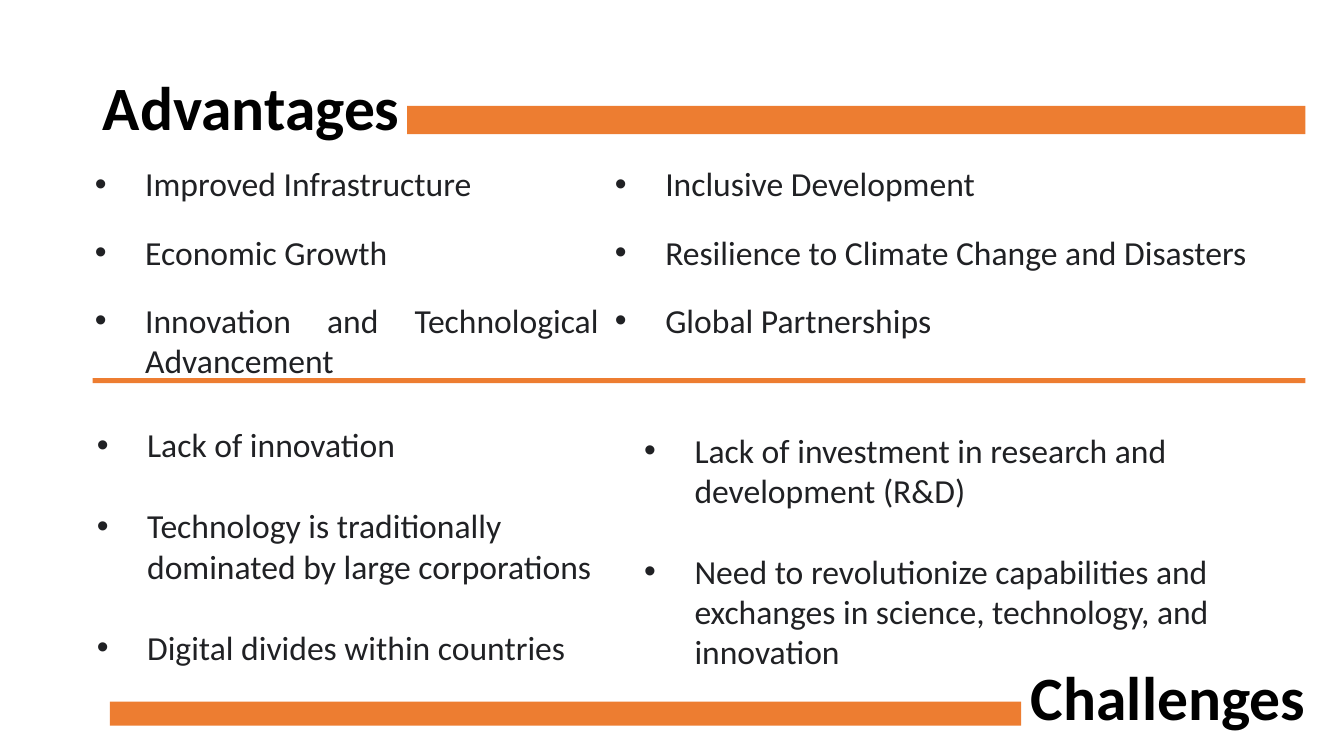
from lxml import etree
from pptx import Presentation
from pptx.dml.color import RGBColor
from pptx.enum.shapes import MSO_SHAPE
from pptx.enum.text import MSO_ANCHOR, MSO_AUTO_SIZE, PP_ALIGN
from pptx.oxml.ns import qn
from pptx.util import Pt

RECT = MSO_SHAPE.RECTANGLE
TOP, MIDDLE = MSO_ANCHOR.TOP, MSO_ANCHOR.MIDDLE
NO_FIT = MSO_AUTO_SIZE.NONE
LEFT, JUSTIFY = PP_ALIGN.LEFT, PP_ALIGN.JUSTIFY

PX = 9144  # 100 px to the inch
COLORS = {"accent": "ED7D31", "head": "000000", "text": "202124"}
HEAD = {"name": "Calibri", "size": Pt(44), "bold": True}
ITEM = {"name": "Calibri", "size": Pt(24), "bold": False}

# Placeholder number, box, alignment, gap in points, items
LISTS = [
    (1, (59, 157, 545, 182), JUSTIFY, 20,
     ["Improved Infrastructure", "Economic Growth",
      "Innovation and Technological Advancement"]),
    (2, (575, 157, 740, 182), JUSTIFY, 20,
     ["Inclusive Development", "Resilience to Climate Change and Disasters",
      "Global Partnerships"]),
    (3, (61, 416, 580, 269), LEFT, 29,
     ["Lack of innovation",
      "Technology is traditionally dominated by large corporations",
      "Digital divides within countries"]),
    (4, (604, 421, 691, 212), LEFT, 29,
     ["Lack of investment in research and development (R&D)",
      "Need to revolutionize capabilities and exchanges in science, "
      "technology, and innovation"]),
]

# Divider, then the bars beside the two headings
BARS = [(92, 375, 1203, 5), (404, 105, 891, 28), (109, 696, 904, 24)]


def place(shape, box):
    for side, px in zip(("left", "top", "width", "height"), box):
        setattr(shape, side, px * PX)


def style(font, look, color):
    for key, value in look.items():
        setattr(font, key, value)
    font.color.rgb = RGBColor.from_string(COLORS[color])


def set_frame(frame, anchor):
    frame.word_wrap = True
    frame.auto_size = NO_FIT
    frame.vertical_anchor = anchor


def add_bullet(para):
    props = para._p.get_or_add_pPr()
    props.set("marL", str(75 * PX))
    props.set("indent", str(-50 * PX))
    tint = etree.SubElement(props, qn("a:buClr"))
    etree.SubElement(tint, qn("a:srgbClr"), val=COLORS["text"])
    etree.SubElement(props, qn("a:buFont"), typeface="Arial")
    etree.SubElement(props, qn("a:buChar"), char="•")


def fill_head(shape, box, text):
    place(shape, box)
    frame = shape.text_frame
    set_frame(frame, MIDDLE)
    para = frame.paragraphs[0]
    para.alignment = LEFT
    para.line_spacing = 0.9
    run = para.add_run()
    run.text = text
    style(run.font, HEAD, "head")


def fill_list(shape, box, align, gap, items):
    place(shape, box)
    frame = shape.text_frame
    set_frame(frame, TOP)
    for i, item in enumerate(items):
        para = frame.add_paragraph() if i else frame.paragraphs[0]
        add_bullet(para)
        para.alignment = align
        para.space_before = Pt(gap if i else 0)
        run = para.add_run()
        run.text = item
        style(run.font, ITEM, "text")


def add_bar(slide, box):
    bar = slide.shapes.add_shape(RECT, *(px * PX for px in box))
    bar.shadow.inherit = False
    bar.fill.solid()
    bar.fill.fore_color.rgb = RGBColor.from_string(COLORS["accent"])
    bar.line.fill.background()


def main():
    deck = Presentation()
    deck.slide_width, deck.slide_height = 12192000, 750 * PX
    # The comparison layout has a title and four lists
    slide = deck.slides.add_slide(deck.slide_layouts[4])

    # Headings
    fill_head(slide.shapes.title, (92, 37, 1150, 145), "Advantages")
    box = (1013, 640, 310, 109)
    label = slide.shapes.add_textbox(*(px * PX for px in box))
    fill_head(label, box, "Challenges")

    # Lists
    for idx, *parts in LISTS:
        fill_list(slide.placeholders[idx], *parts)

    # Bars
    for box in BARS:
        add_bar(slide, box)

    deck.save("out.pptx")


if __name__ == "__main__":
    main()
